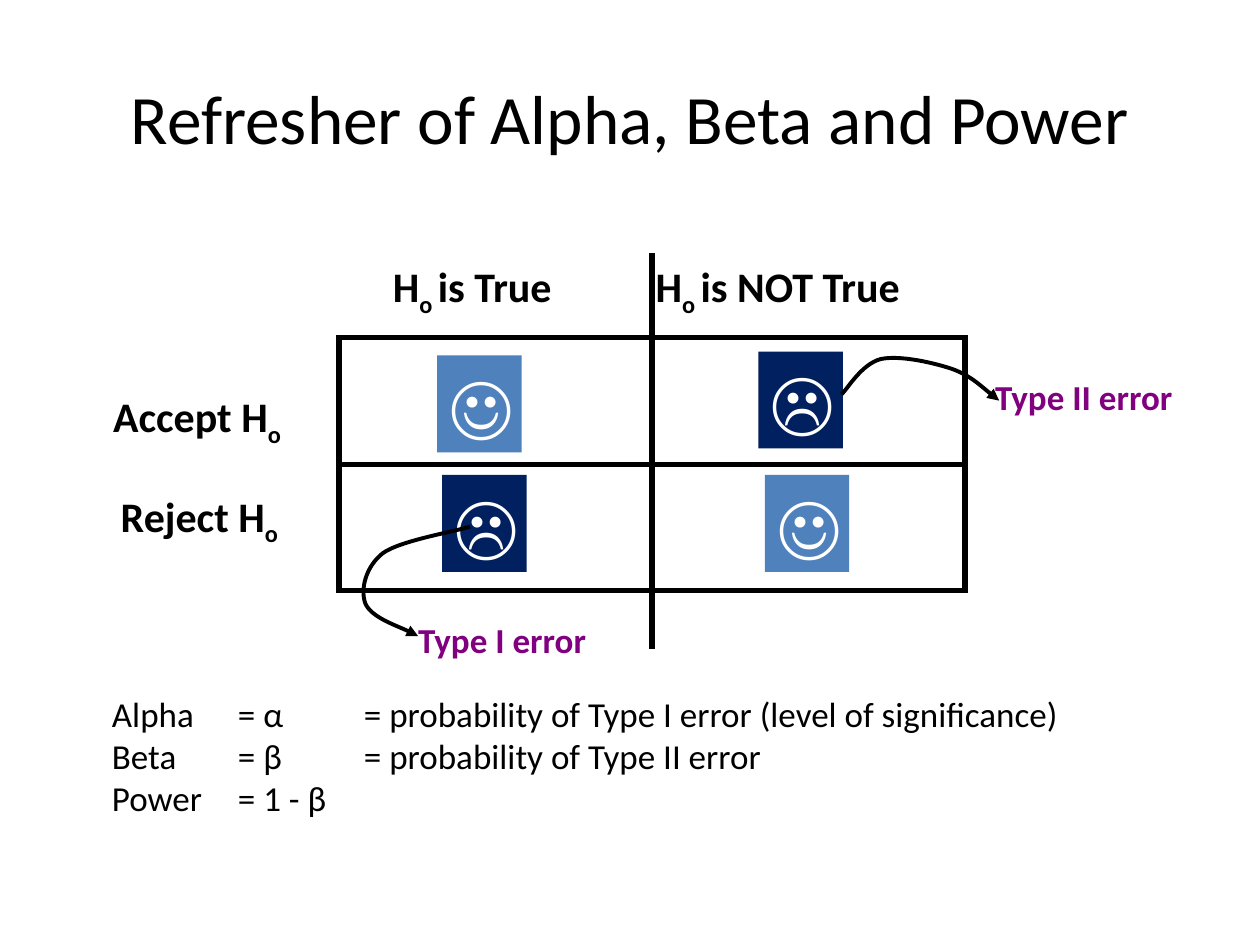
from lxml import etree
from pptx import Presentation
from pptx.dml.color import RGBColor
from pptx.enum.shapes import MSO_CONNECTOR, MSO_SHAPE
from pptx.enum.text import MSO_ANCHOR, MSO_AUTO_SIZE, PP_ALIGN
from pptx.oxml.ns import qn
from pptx.util import Inches, Pt

LINE, RECT = MSO_CONNECTOR.STRAIGHT, MSO_SHAPE.RECTANGLE
TOP, MID = MSO_ANCHOR.TOP, MSO_ANCHOR.MIDDLE
LEFT, CENTER = PP_ALIGN.LEFT, PP_ALIGN.CENTER
GROW = MSO_AUTO_SIZE.SHAPE_TO_FIT_TEXT
FONT = "Calibri"
HEX = {"ink": "000000", "good": "4F81BD", "bad": "002060",
       "error": "800080", "face": "FFFFFF"}


def tint(name):
    """Return the named colour."""
    return RGBColor.from_string(HEX[name])


def emu(*vals):
    """Turn inches into whole units."""
    return [Inches(v) for v in vals]


def add_run(para, text, size, color="ink", bold=False, sub=False):
    """Add one styled run to a paragraph."""
    run = para.add_run()
    run.text = text
    font = run.font
    font.name, font.size, font.bold = FONT, Pt(size), bold
    font.color.rgb = tint(color)
    if sub:
        font._element.set("baseline", "-25000")


def add_box(slide, box, wrap=False):
    """Add a text box and return its frame."""
    frame = slide.shapes.add_textbox(*emu(*box)).text_frame
    frame.word_wrap, frame.auto_size = wrap, GROW
    return frame


def add_head(slide, box, text):
    """Fill the title placeholder."""
    title = slide.shapes.title
    title.left, title.top, title.width, title.height = emu(*box)
    title.text_frame.vertical_anchor = MID
    para = title.text_frame.paragraphs[0]
    para.alignment = CENTER
    add_run(para, text, 39.6)


def add_label(slide, box, lead, tail=""):
    """Write a bold label around a subscripted o."""
    para = add_box(slide, box).paragraphs[0]
    add_run(para, lead, 24, bold=True)
    add_run(para, "o " if tail else "o", 24, bold=True, sub=True)
    if tail:
        add_run(para, tail, 24, bold=True)


def add_face(slide, box, good):
    """Draw a tile with a happy or sad face."""
    tile = slide.shapes.add_shape(RECT, *emu(*box))
    tile.shadow.inherit = False
    tile.fill.solid()
    tile.fill.fore_color.rgb = tint("good" if good else "bad")
    tile.line.fill.background()
    frame = tile.text_frame
    frame.word_wrap, frame.auto_size = False, GROW
    frame.vertical_anchor = TOP
    para = frame.paragraphs[0]
    para.alignment = LEFT
    add_run(para, "☺" if good else "☹", 40, "face", True)


def add_rule(slide, *ends):
    """Draw a straight black rule."""
    rule = slide.shapes.add_connector(LINE, *emu(*ends))
    rule.line.color.rgb, rule.line.width = tint("ink"), Pt(3)
    etree.SubElement(rule._element.spPr, qn("a:effectLst"))


def add_grid(slide, box):
    """Draw the two by two decision grid with labels and faces."""
    x, y, w, h = box
    mid, row = x + w / 2, y + h / 2
    for at, good in (((0.78, 0.14), True), ((3.38, 1.09), True),
                     ((0.82, 1.09), False), ((3.33, 0.11), False)):
        add_face(slide, (x + at[0], y + at[1], 0.67, 0.77), good)
    add_label(slide, (x - 1.89, y + 0.37, 1.56, 0.51), "Accept H")
    add_label(slide, (x - 1.83, y + 1.16, 1.48, 0.51), "Reject H")
    add_label(slide, (x + 0.33, y - 0.66, 1.5, 0.51), "H", "is True")
    add_label(slide, (mid - 0.07, y - 0.66, 2.2, 0.51), "H", "is NOT True")
    frame = slide.shapes.add_shape(RECT, *emu(*box))
    frame.shadow.inherit = False
    frame.fill.background()
    frame.line.color.rgb, frame.line.width = tint("ink"), Pt(3)
    etree.SubElement(frame.line._get_or_add_ln(), qn("a:miter"), lim="800000")
    add_rule(slide, x, row, x + w, row)
    add_rule(slide, mid, y - 0.67, mid, y + h + 0.46)


def add_curve(slide, x, y, points):
    """Draw a curved arrow from control points offset from x and y."""
    spots = [emu(x + dx, y + dy) for dx, dy in points]
    pen = slide.shapes.build_freeform(*spots[0])
    pen.add_line_segments(spots[1:], close=False)
    arrow = pen.convert_to_shape()
    arrow.shadow.inherit = False
    arrow.fill.background()
    arrow.line.color.rgb, arrow.line.width = tint("ink"), Pt(2.25)
    etree.SubElement(arrow.line._get_or_add_ln(), qn("a:tailEnd"),
                     type="triangle")
    track = next(arrow._element.iter(qn("a:path")))
    steps = track.findall(qn("a:lnTo"))
    for i in range(0, len(steps), 3):
        bend = etree.SubElement(track, qn("a:cubicBezTo"))
        for step in steps[i:i + 3]:
            bend.append(step[0])
            track.remove(step)


def add_error(slide, box, text, start, points):
    """Name an error and point to it with a curved arrow."""
    add_curve(slide, *start, points)
    para = add_box(slide, box, True).paragraphs[0]
    add_run(para, text, 20, "error", True)


def add_tabs(para, *stops):
    """Set left tab stops in inches."""
    tabs = etree.SubElement(para._p.get_or_add_pPr(), qn("a:tabLst"))
    for stop in stops:
        etree.SubElement(tabs, qn("a:tab"), pos=str(Inches(stop)), algn="l")


def add_terms(slide, box):
    """List the definitions in tabbed columns."""
    frame = add_box(slide, box)
    para, last = frame.paragraphs[0], frame.add_paragraph()
    for part in (para, last):
        add_tabs(part, 1, 2)
    add_run(para, "Alpha\t= α\t= probability of Type I error "
            "(level of significance)", 20)
    para.add_line_break()
    add_run(para, "Beta\t= β\t= probability of Type II error", 20)
    add_run(last, "Power\t= 1 - β", 20)


def main():
    """Build and save the slide."""
    deck = Presentation()
    deck.slide_width, deck.slide_height = emu(10, 7.5)
    slide = deck.slides.add_slide(deck.slide_layouts[5])
    add_head(slide, (0.5, 0.3, 9, 1.25), "Refresher of Alpha, Beta and Power")
    add_grid(slide, (2.69, 2.68, 4.97, 2.01))
    add_error(slide, (3.22, 4.86, 2.11, 0.43), "Type I error", (3.73, 4.18),
              [(0, 0), (-0.12, 0.04), (-0.55, 0.11), (-0.69, 0.21),
               (-0.83, 0.32), (-0.87, 0.5), (-0.83, 0.61),
               (-0.78, 0.72), (-0.49, 0.82), (-0.41, 0.87)])
    add_error(slide, (7.8, 2.93, 2.2, 0.43), "Type II error", (6.68, 3.13),
              [(0, 0), (0.05, -0.05), (0.16, -0.24), (0.31, -0.28),
               (0.45, -0.31), (0.69, -0.26), (0.85, -0.21),
               (1.01, -0.16), (1.17, -0.01), (1.25, 0.05)])
    add_terms(slide, (0.79, 5.45, 7.78, 1.11))
    deck.save("out.pptx")


if __name__ == "__main__":
    main()
